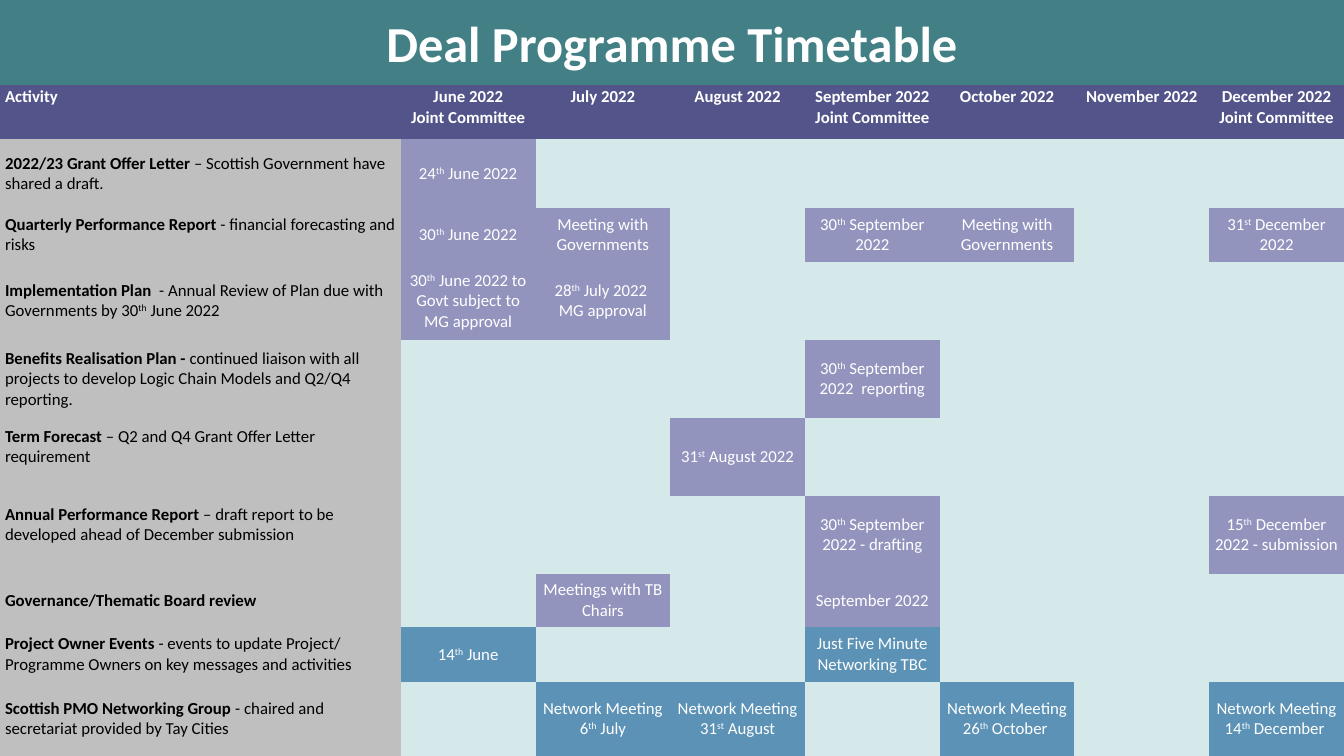
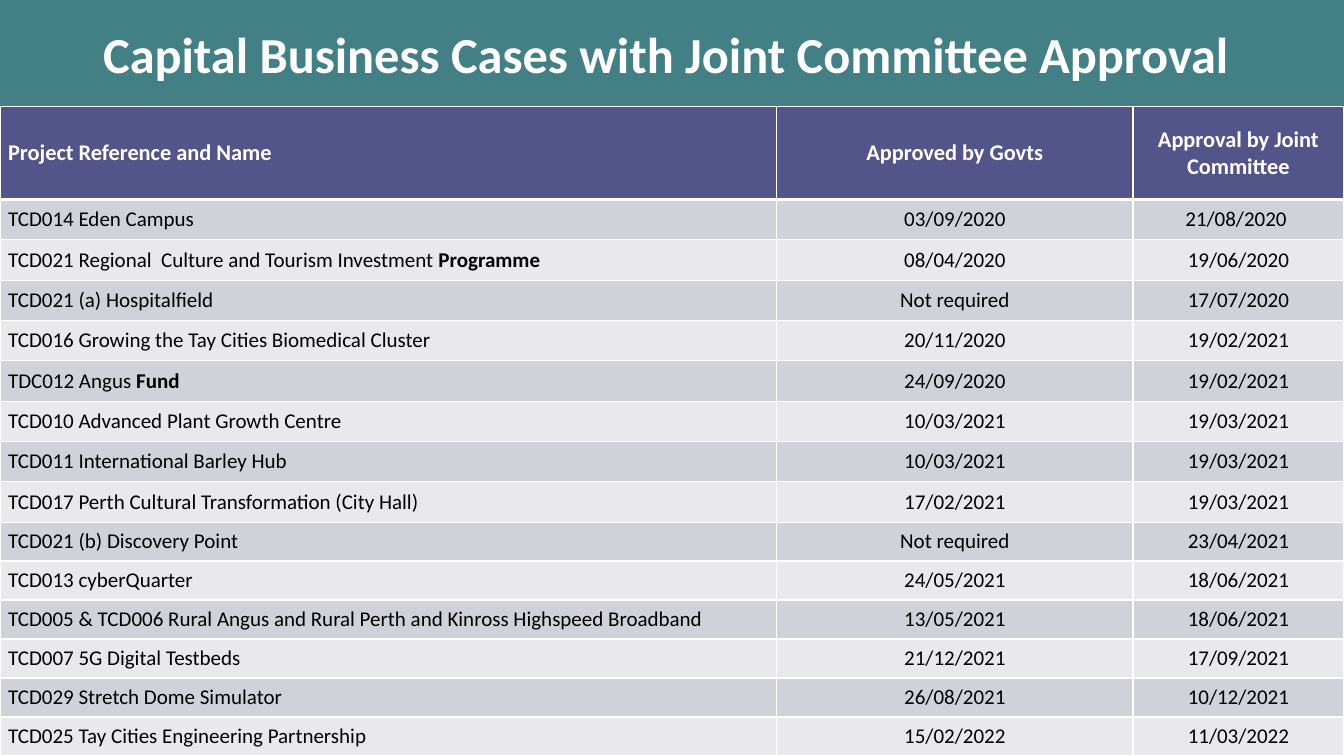
from dataclasses import dataclass

from lxml.etree import SubElement
from pptx import Presentation
from pptx.dml.color import RGBColor
from pptx.enum.text import MSO_ANCHOR as Anchor, MSO_AUTO_SIZE as AutoSize, PP_ALIGN as Align
from pptx.oxml.ns import qn
from pptx.util import Emu, Pt

EMU_PER_PX = 3048
WIDTH, HEIGHT = 4000, 2250
TITLE_ONLY = 5
NO_STYLE = "{2D5ABB26-0587-4C30-8999-92F81FD0307C}"


def px(length):
    return Emu(length * EMU_PER_PX)


def apply(target, values):
    for name, value in values.items():
        setattr(target, name, value)


@dataclass(frozen=True)
class Theme:
    font: str = "Calibri"
    white: str = "FFFFFF"
    black: str = "000000"
    band: str = "438086"
    header: str = "53548A"
    activity: str = "BFBFBF"
    empty: str = "D6E9EA"
    milestone: str = "9394BE"
    event: str = "5C92B5"
    odd_row: str = "D1D1DA"
    even_row: str = "E9E9ED"
    title_size: int = 36
    header_size: int = 16
    body_size: int = 15
    small_size: int = 12


class Painter:
    """Draws the deck's elements on the current slide in one style; *bold* and ^raised^ mark up text."""

    def __init__(self, deck, theme):
        self.deck, self.theme, self.slide = deck, theme, None

    def new_slide(self, title, top, height):
        self.slide = self.deck.slides.add_slide(self.deck.slide_layouts[TITLE_ONLY])
        box = self.slide.shapes.title
        apply(box, {"left": px(0), "top": px(top), "width": px(WIDTH), "height": px(height)})
        self.fill(box, self.theme.band)
        apply(box.text_frame, {"vertical_anchor": Anchor.MIDDLE, "word_wrap": True,
                               "auto_size": AutoSize.NONE})
        self.add_text(box.text_frame, f"*{title}*", self.theme.title_size, self.theme.white, Align.CENTER)

    def fill(self, target, color):
        target.fill.solid()
        target.fill.fore_color.rgb = RGBColor.from_string(color)

    def add_text(self, frame, text, size, color, align=Align.LEFT):
        for index, line in enumerate(text.split("\n")):
            para = frame.add_paragraph() if index else frame.paragraphs[0]
            para.alignment = align
            for bold_index, part in enumerate(line.split("*")):
                for raised_index, words in enumerate(part.split("^")):
                    if words:
                        span = para.add_run()
                        span.text = words
                        apply(span.font, {"name": self.theme.font, "size": Pt(size),
                                          "bold": bold_index % 2 == 1})
                        span.font.color.rgb = RGBColor.from_string(color)
                        if raised_index % 2:
                            span.font._element.set("baseline", "30000")

    def table(self, top, columns, rows):
        frame = self.slide.shapes.add_table(len(rows), len(columns), px(0), px(top),
                                            px(sum(columns)), px(sum(rows)))
        table = frame.table
        apply(table, {"first_row": False, "horz_banding": False})
        table._tbl.tblPr.find(qn("a:tableStyleId")).text = NO_STYLE
        for column, width in zip(table.columns, columns):
            column.width = px(width)
        for row, height in zip(table.rows, rows):
            row.height = px(height)
        return table

    def cell(self, cell, text, fill, size, color, inset, align=Align.LEFT, anchor=Anchor.MIDDLE, lift=0):
        side, edge = inset
        apply(cell, {"vertical_anchor": anchor, "margin_left": px(side), "margin_right": px(side),
                     "margin_top": px(edge), "margin_bottom": px(edge + lift)})
        self.fill(cell, fill)
        self.add_text(cell.text_frame, text, size, color, align)

    def borders(self, cell, top, bottom):
        properties = cell._tc.get_or_add_tcPr()
        for index, (side, width) in enumerate({"L": 1, "R": 1, "T": top, "B": bottom}.items()):
            line = SubElement(properties, qn(f"a:ln{side}"), w=str(Pt(width)))
            SubElement(SubElement(line, qn("a:solidFill")), qn("a:srgbClr"), val=self.theme.white)
            properties.insert(index, line)


MONTHS = ["June 2022\nJoint Committee", "July 2022", "August 2022", "September 2022\nJoint Committee",
          "October 2022", "November 2022", "December 2022 Joint Committee"]
JUNE, JULY, AUGUST, SEPTEMBER, OCTOBER, NOVEMBER, DECEMBER = range(1, 8)
LINE_LIFT = 61

ACTIVITIES = [
    (205, 0, "milestone", "*2022/23 Grant Offer Letter* – Scottish Government have shared a draft.",
     {JUNE: "24^th^ June 2022"}),
    (161, 0, "milestone", "*Quarterly Performance Report* - financial forecasting and risks",
     {JUNE: "30^th^ June 2022", JULY: "Meeting with Governments",
      SEPTEMBER: "30^th^ September 2022", OCTOBER: "Meeting with Governments",
      DECEMBER: "31^st^ December 2022"}),
    (232, 0, "milestone",
     "*Implementation Plan * - Annual Review of Plan due with Governments by 30^th^ June 2022",
     {JUNE: "30^th^ June 2022 to Govt subject to MG approval",
      JULY: "28^th^ July 2022 \nMG approval"}),
    (232, 0, "milestone", "*Benefits Realisation Plan - *continued liaison with all projects "
     "to develop Logic Chain Models and Q2/Q4 reporting.",
     {SEPTEMBER: "30^th^ September 2022  reporting"}),
    (232, LINE_LIFT, "milestone", "*Term Forecast *– Q2 and Q4 Grant Offer Letter requirement",
     {AUGUST: "31^st^ August 2022"}),
    (232, LINE_LIFT, "milestone",
     "*Annual Performance Report *– draft report to be developed ahead of December submission",
     {SEPTEMBER: "30^th^ September 2022 - drafting", DECEMBER: "15^th^ December 2022 - submission"}),
    (158, 0, "milestone", "*Governance/Thematic Board review*",
     {JULY: "Meetings with TB Chairs", SEPTEMBER: "September 2022"}),
    (164, 0, "event",
     "*Project Owner Events *- events to update Project/ Programme Owners on key messages and activities",
     {JUNE: "14^th^ June", SEPTEMBER: "Just Five Minute Networking TBC"}),
    (220, 0, "event", "*Scottish PMO Networking Group *- chaired and secretariat provided by Tay Cities",
     {JULY: "Network Meeting 6^th^ July", AUGUST: "Network Meeting 31^st^ August",
      OCTOBER: "Network Meeting 26^th^ October ", DECEMBER: "Network Meeting 14^th^ December "}),
]

APPROVAL_HEADINGS = ["Project Reference and Name", "Approved by Govts", "Approval by Joint Committee"]
APPROVALS = [
    ("TCD014 Eden Campus", "03/09/2020", "21/08/2020 "),
    ("TCD021 Regional  Culture and Tourism Investment *Programme*", "08/04/2020", "19/06/2020"),
    ("TCD021 (a) Hospitalfield", "Not required", "17/07/2020"),
    ("TCD016 Growing the Tay Cities Biomedical Cluster", "20/11/2020", "19/02/2021"),
    ("TDC012 Angus *Fund*", "24/09/2020", "19/02/2021"),
    ("TCD010 Advanced Plant Growth Centre", "10/03/2021", "19/03/2021"),
    ("TCD011 International Barley Hub", "10/03/2021", "19/03/2021"),
    ("TCD017 Perth Cultural Transformation (City Hall)", "17/02/2021", "19/03/2021"),
    ("TCD021 (b) Discovery Point", "Not required", "23/04/2021"),
    ("TCD013 cyberQuarter", "24/05/2021", "18/06/2021"),
    ("TCD005 & TCD006 Rural Angus and Rural Perth and Kinross Highspeed Broadband",
     "13/05/2021", "18/06/2021"),
    ("TCD007 5G Digital Testbeds", "21/12/2021", "17/09/2021"),
    ("TCD029 Stretch Dome Simulator", "26/08/2021", "10/12/2021"),
    ("TCD025 Tay Cities Engineering Partnership", "15/02/2022", "11/03/2022"),
]


def timetable_slide(painter):
    theme, inset = painter.theme, (15, 6)
    painter.new_slide("Deal Programme Timetable", -9, 270)
    table = painter.table(253, [1193] + [401] * len(MONTHS), [161] + [row[0] for row in ACTIVITIES])
    for column, heading in enumerate(["Activity"] + MONTHS):
        bold = "\n".join(f"*{line}*" for line in heading.split("\n"))
        painter.cell(table.cell(0, column), bold, theme.header, theme.small_size, theme.white, inset,
                     Align.CENTER if column else Align.LEFT, Anchor.TOP)
    for row, (_, lift, kind, activity, dates) in enumerate(ACTIVITIES, 1):
        painter.cell(table.cell(row, 0), activity, theme.activity, theme.small_size, theme.black,
                     inset, lift=lift)
        for month in range(JUNE, DECEMBER + 1):
            fill = getattr(theme, kind) if month in dates else theme.empty
            painter.cell(table.cell(row, month), dates.get(month, ""), fill, theme.small_size,
                         theme.white, inset, Align.CENTER)


def approvals_slide(painter):
    theme, inset = painter.theme, (24, 12)
    painter.new_slide("Capital Business Cases with Joint Committee Approval ", 0, 318)
    table = painter.table(318, [2312, 1060, 628], [276] + [120] * 8 + [116] * 6)
    headings = [f"*{heading}*" for heading in APPROVAL_HEADINGS]
    for row, texts in enumerate([headings] + APPROVALS):
        if row == 0:
            look = theme.header, theme.header_size, theme.white
        else:
            look = theme.odd_row if row % 2 else theme.even_row, theme.body_size, theme.black
        for column, text in enumerate(texts):
            cell = table.cell(row, column)
            painter.cell(cell, text, *look, inset, Align.CENTER if column else Align.LEFT)
            painter.borders(cell, 3 if row == 1 else 1, 3 if row == 0 else 1)


def main():
    deck = Presentation()
    apply(deck, {"slide_width": px(WIDTH), "slide_height": px(HEIGHT)})
    painter = Painter(deck, Theme())
    timetable_slide(painter)
    approvals_slide(painter)
    deck.save("out.pptx")


if __name__ == "__main__":
    main()
